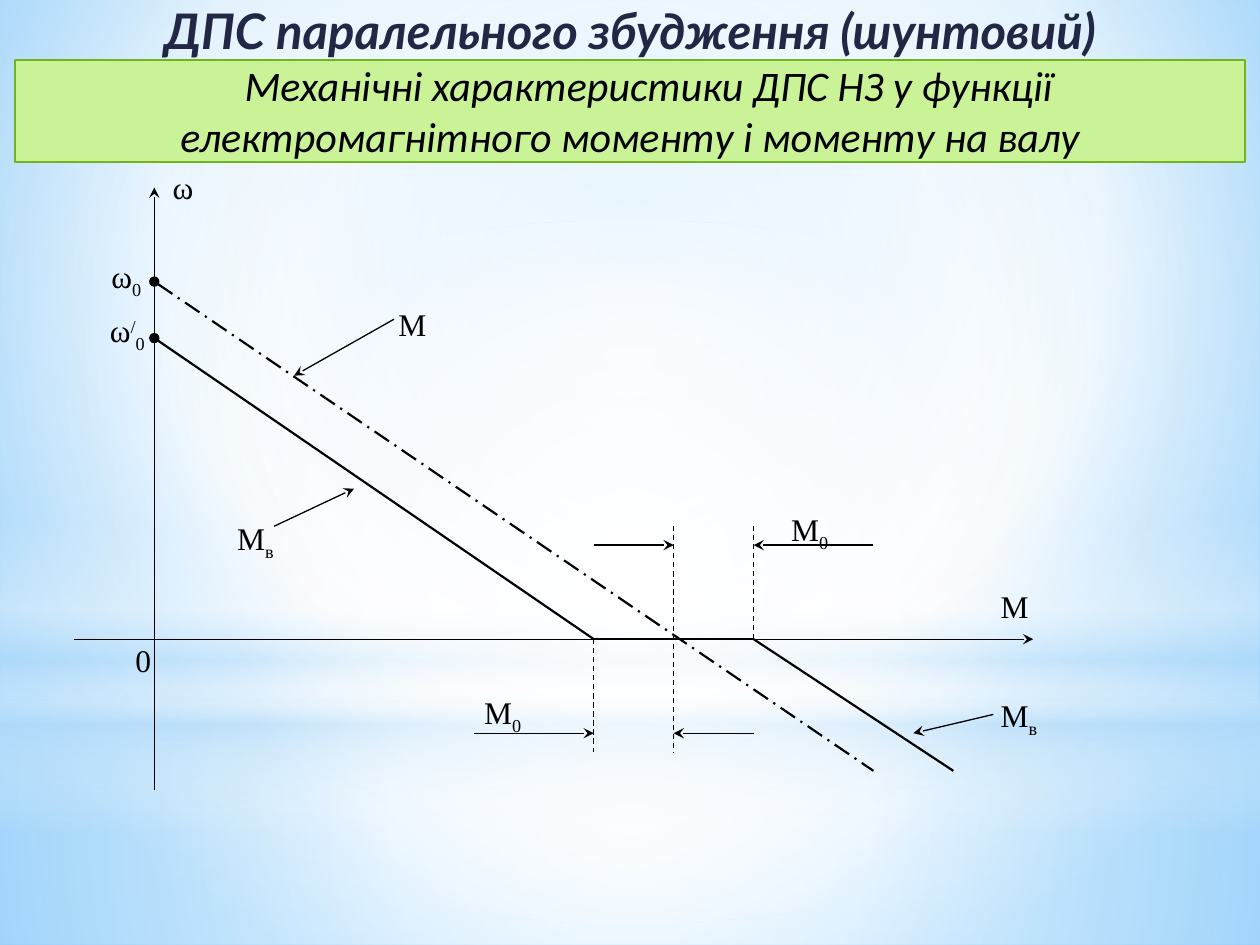
from dataclasses import dataclass
from lxml import etree
from pptx import Presentation
from pptx.dml.color import RGBColor
from pptx.enum.dml import MSO_LINE
from pptx.enum.shapes import MSO_CONNECTOR, MSO_SHAPE
from pptx.enum.text import MSO_ANCHOR, MSO_AUTO_SIZE, PP_ALIGN
from pptx.oxml.ns import qn
from pptx.util import Cm, Pt

RECT, OVAL = MSO_SHAPE.RECTANGLE, MSO_SHAPE.OVAL
STRAIGHT = MSO_CONNECTOR.STRAIGHT
DASH, DASH_DOT = MSO_LINE.DASH, MSO_LINE.LONG_DASH_DOT
LEFT, CENTER, RIGHT = PP_ALIGN.LEFT, PP_ALIGN.CENTER, PP_ALIGN.RIGHT
TOP = MSO_ANCHOR.TOP
GROW, FIXED = MSO_AUTO_SIZE.SHAPE_TO_FIT_TEXT, MSO_AUTO_SIZE.NONE
SUB, SUP = -25000, 30000
W, H = 25.4, 19.05


@dataclass(frozen=True)
class Theme:
    """Colours, fonts and sizes of the slide."""
    ink: str = "000000"
    title: str = "212745"
    panel: str = "CAF297"
    panel_edge: str = "72B41D"
    white: str = "FFFFFF"
    haze: str = "B4DCFA"
    sky: str = "9ED5FF"
    deep_sky: str = "5BB9FF"
    title_font: str = "Lato"
    panel_font: str = "Calibri"
    label_font: str = "Times New Roman"
    title_size: int = 28
    panel_size: int = 24
    label_size: int = 18
    thin: float = 0.75
    thick: float = 1.25


T = Theme()


def apply(obj, **fmt):
    """Set each named format value on an object."""
    for name, value in fmt.items():
        setattr(obj, name, value)


def style_font(r, name, size, color, **fmt):
    """Format the font of one run."""
    apply(r.font, name=name, size=Pt(size), **fmt)
    r.font.color.rgb = RGBColor.from_string(color)


def set_frame(tf, side=0, **fmt):
    """Make a wrapping text frame with tight margins."""
    apply(tf, word_wrap=True, vertical_anchor=TOP, margin_left=Cm(side),
          margin_right=Cm(side), margin_top=0, margin_bottom=0, **fmt)


def set_gradient(fill, holder, stops, focus=None, angle=0):
    """Fill with stops of (position, colour, opacity), radial if a focus is given."""
    fill.gradient()
    grad = holder.find(".//" + qn("a:gradFill"))
    for child in list(grad):
        grad.remove(child)
    gs_list = etree.SubElement(grad, qn("a:gsLst"))
    for pos, color, alpha in stops:
        gs = etree.SubElement(gs_list, qn("a:gs"), pos=str(pos * 1000))
        clr = etree.SubElement(gs, qn("a:srgbClr"), val=color)
        etree.SubElement(clr, qn("a:alpha"), val=str(alpha * 1000))
    if focus:
        path = etree.SubElement(grad, qn("a:path"), path="circle")
        etree.SubElement(path, qn("a:fillToRect"),
                         {k: str(v * 1000) for k, v in zip("ltrb", focus)})
    else:
        etree.SubElement(grad, qn("a:lin"), ang=str(angle * 60000), scaled="0")


def add_backdrop(s):
    """Paint the background and its translucent layers."""
    set_gradient(s.background.fill, s._element,
                 [(0, T.sky, 100), (60, T.white, 100), (100, T.deep_sky, 100)],
                 (20, 10, 20, 60))
    mid = (50, 50, 50, 50)
    layers = [
        (RECT, 14.17, 4.88, mid, [(0, T.white, 91), (37, T.white, 76), (100, T.haze, 79)]),
        (RECT, 0, 14.17, mid, [(0, T.white, 89), (48, T.white, 62), (100, T.haze, 79)]),
        (RECT, 10.46, 6.35, None, [(0, T.white, 0), (29, T.white, 30), (45, T.haze, 40),
                                   (55, T.white, 26), (65, T.haze, 60), (100, T.white, 0)]),
        (OVAL, 4.45, 14.17, mid, [(0, T.white, 100), (56, T.white, 0)]),
    ]
    for kind, top, height, focus, stops in layers:
        sp = s.shapes.add_shape(kind, 0, Cm(top), Cm(W), Cm(height))
        sp.shadow.inherit = False
        sp.line.fill.background()
        set_gradient(sp.fill, sp._element, stops, focus, 90)


def add_heading(s, left, top, width):
    """Place the title and the green panel under it."""
    sp = s.shapes.title
    apply(sp, left=Cm(left), top=Cm(top), width=Cm(width), height=Cm(1.19))
    set_frame(sp.text_frame, auto_size=GROW)
    p = sp.text_frame.paragraphs[0]
    apply(p, alignment=CENTER, line_spacing=1.0, space_before=Pt(0))
    r = p.add_run()
    r.text = "ДПС паралельного збудження (шунтовий)"
    style_font(r, T.title_font, T.title_size, T.title, bold=True, italic=True)

    sp = s.shapes.add_shape(RECT, Cm(left), Cm(top + 1.21), Cm(width), Cm(2.06))
    sp.shadow.inherit = False
    sp.fill.solid()
    sp.fill.fore_color.rgb = RGBColor.from_string(T.panel)
    sp.line.color.rgb = RGBColor.from_string(T.panel_edge)
    sp.line.width = Pt(T.thick)
    set_frame(sp.text_frame, 0.1, auto_size=GROW)
    p = sp.text_frame.paragraphs[0]
    p.alignment = CENTER
    p._p.get_or_add_pPr().set("indent", str(Cm(0.76)))
    r = p.add_run()
    r.text = ("Механічні характеристики ДПС НЗ у функції "
              "електромагнітного моменту і моменту на валу")
    style_font(r, T.panel_font, T.panel_size, T.ink, italic=True)


def add_line(shapes, ends, width, dash=None, head=None, tail=None):
    """Draw a straight line with optional dash and end marks."""
    cx = shapes.add_connector(STRAIGHT, *(Cm(v) for v in ends))
    cx.line.color.rgb = RGBColor.from_string(T.ink)
    cx.line.width = Pt(width)
    if dash:
        cx.line.dash_style = dash
    ln = cx.line._get_or_add_ln()
    for tag, mark in (("a:headEnd", head), ("a:tailEnd", tail)):
        if mark:
            etree.SubElement(ln, qn(tag), type=mark)
    etree.SubElement(cx._element.spPr, qn("a:effectLst"))


def add_label(shapes, left, top, width, height, parts, align=LEFT):
    """Write a symbol whose parts are (text, baseline shift)."""
    sp = shapes.add_textbox(Cm(left), Cm(top), Cm(width), Cm(height))
    set_frame(sp.text_frame, auto_size=FIXED)
    p = sp.text_frame.paragraphs[0]
    apply(p, alignment=align, line_spacing=1.15, space_after=Pt(10))
    for text, shift in parts:
        r = p.add_run()
        r.text = text
        style_font(r, T.label_font, T.label_size, T.ink)
        if shift:
            r._r.get_or_add_rPr().set("baseline", str(shift))


def add_graph(s, left, top, width, height):
    """Draw the speed-torque graph on a grid of 24 columns and 32 rows."""
    shapes = s.shapes.add_group_shape().shapes
    dx, dy = width / 24, height / 32
    arrow = {"width": T.thin, "tail": "stealth"}
    curve = {"width": T.thick}
    guide = {"width": T.thin, "dash": DASH}
    lines = [
        (2, 32, 2, 0, arrow), (0, 24, 24, 24, arrow),
        (2, 8, 13, 24, {**curve, "head": "oval"}),
        (13, 24, 17, 24, curve), (17, 24, 22, 31, curve),
        (2, 5, 20, 31, {**curve, "dash": DASH_DOT, "head": "oval"}),
        (13, 24, 13, 30, guide), (15, 18, 15, 30, guide), (17, 24, 17, 18, guide),
        (10, 29, 13, 29, arrow), (13, 19, 15, 19, arrow),
        (20, 19, 17, 19, arrow), (17, 29, 15, 29, arrow),
        (8, 7, 5.5, 10, arrow), (5, 18, 7, 16, arrow), (23, 28, 21, 29, arrow),
    ]
    for x1, y1, x2, y2, fmt in lines:
        ends = (left + x1 * dx, top + y1 * dy, left + x2 * dx, top + y2 * dy)
        add_line(shapes, ends, **fmt)

    moment, speed, zero = ("М", 0), ("ω", 0), ("0", SUB)
    idle, shaft = [moment, zero], [moment, ("в", SUB)]
    labels = [
        (6.53, 2.26, 2.69, 0.71, [moment], LEFT),
        (1.98, -0.51, 0.97, 1.14, [speed], LEFT),
        (0.08, 1.27, 1.27, 1.24, [speed, zero], RIGHT),
        (0.15, 2.36, 1.27, 1.24, [speed, ("/", SUP), zero], RIGHT),
        (14.45, 6.38, 1.7, 0.61, idle, LEFT),
        (8.26, 10.06, 1.7, 0.84, idle, LEFT),
        (18.67, 7.95, 1.75, 0.86, [moment], LEFT),
        (3.28, 6.55, 1.5, 1.42, shaft, LEFT),
        (18.67, 10.13, 1.73, 1.24, shaft, LEFT),
        (0.53, 9.02, 1.02, 1.14, [("0", 0)], RIGHT),
    ]
    for x, y, w, h, parts, align in labels:
        add_label(shapes, left + x, top + y, w, h, parts, align)


def main():
    """Build the slide and save it."""
    prs = Presentation()
    apply(prs, slide_width=Cm(W), slide_height=Cm(H))
    s = prs.slides.add_slide(prs.slide_layouts[5])
    add_backdrop(s)
    title = s.shapes.title._element
    s.shapes._spTree.append(title)
    add_heading(s, 0.3, 0, 24.8)
    add_graph(s, 1.5, 3.78, 19.33, 12.14)
    prs.save("out.pptx")


if __name__ == "__main__":
    main()
